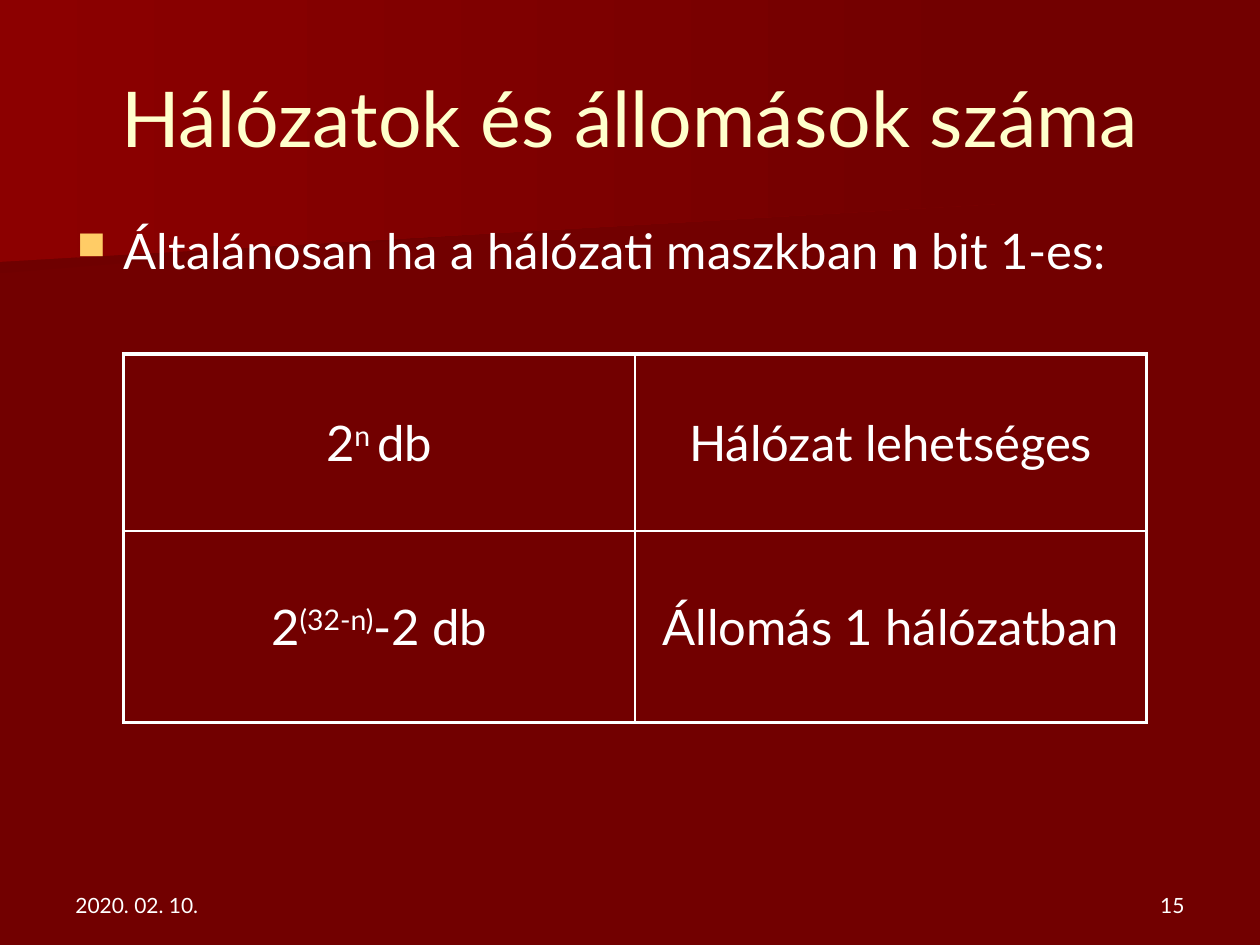
from lxml import etree
from pptx import Presentation
from pptx.dml.color import RGBColor
from pptx.enum import text
from pptx.oxml import ns
from pptx.util import Cm, Pt

WHITE = RGBColor(0xFF, 0xFF, 0xFF)
CREAM = RGBColor(0xFF, 0xFF, 0xCC)
GOLD = RGBColor(0xFF, 0xCC, 0x66)
DARK_RED = RGBColor(0x72, 0x00, 0x00)
SHADE_RED = RGBColor(0x6F, 0x00, 0x00)
BRIGHT_RED = RGBColor(0x8C, 0x00, 0x00)

FONT = "Lato"
LEFT, CENTER, RIGHT = text.PP_ALIGN.LEFT, text.PP_ALIGN.CENTER, text.PP_ALIGN.RIGHT
TOP, MIDDLE, BOTTOM = text.MSO_ANCHOR.TOP, text.MSO_ANCHOR.MIDDLE, text.MSO_ANCHOR.BOTTOM

BANDS = [
    ([(0, 2.57), (19.79, 2.57), (19.76, 3.89), (0, 5.51)], SHADE_RED),
    ([(0, 0), (20.12, 0), (20.12, 4.11), (0, 5.28)], BRIGHT_RED),
]
TITLE = [("Hálózatok és állomások száma", "")]
BODY = [("Általánosan ha a hálózati maszkban ", ""), ("n", "bold"), (" bit 1-es:", "")]
DATE = [("2020. 02. 10.", "")]
NUMBER = [("15", "")]
ROWS = [
    [[("2", ""), ("n ", "super"), ("db", "")], [("Hálózat lehetséges", "")]],
    [[("2", ""), ("(32-n)", "super"), ("-2 db", "")], [("Állomás 1 hálózatban", "")]],
]
TABLE_LEFT, TABLE_TOP = 2.49, 7.14
COL_WIDTH = 10.31
ROW_HEIGHTS = [3.56, 3.86]
OUTER, INNER = 2.25, 1


def write(p, runs, size, color, align):
    p.alignment = align
    for words, style in runs:
        r = p.add_run()
        r.text = words
        r.font.name = FONT
        r.font.size = Pt(size)
        r.font.color.rgb = color
        if style == "bold":
            r.font.bold = True
        elif style == "super":
            r.font._element.set("baseline", "30000")


def add_text(s, box, runs, size, color, align, anchor):
    tf = s.shapes.add_textbox(*map(Cm, box)).text_frame
    tf.word_wrap = True
    tf.vertical_anchor = anchor
    p = tf.paragraphs[0]
    write(p, runs, size, color, align)
    return p


def add_bullet(p):
    p.space_before = Pt(5.6)
    pPr = p._p.get_or_add_pPr()
    pPr.set("marL", str(Cm(0.95)))
    pPr.set("indent", str(Cm(-0.95)))
    clr = etree.SubElement(pPr, ns.qn("a:buClr"))
    etree.SubElement(clr, ns.qn("a:srgbClr"), val=str(GOLD))
    etree.SubElement(pPr, ns.qn("a:buSzPct"), val="80000")
    etree.SubElement(pPr, ns.qn("a:buChar"), char="■")


def add_borders(cell, widths):
    tcPr = cell._tc.get_or_add_tcPr()
    for i, (side, width) in enumerate(zip("LRTB", widths)):
        ln = etree.Element(ns.qn(f"a:ln{side}"), w=str(Pt(width)))
        fill = etree.SubElement(ln, ns.qn("a:solidFill"))
        etree.SubElement(fill, ns.qn("a:srgbClr"), val=str(WHITE))
        tcPr.insert(i, ln)


def add_band(s, points, color):
    start, *rest = [(Cm(x), Cm(y)) for x, y in points]
    builder = s.shapes.build_freeform(*start)
    builder.add_line_segments(rest, close=True)
    sp = builder.convert_to_shape()
    sp.shadow.inherit = False
    sp.line.fill.background()
    sp.fill.gradient()
    sp.fill.gradient_angle = 0
    for stop, rgb in zip(sp.fill.gradient_stops, (color, DARK_RED)):
        stop.color.rgb = rgb


def add_grid(s):
    n_rows, n_cols = len(ROWS), len(ROWS[0])
    frame = s.shapes.add_table(n_rows, n_cols, Cm(TABLE_LEFT), Cm(TABLE_TOP),
                               Cm(COL_WIDTH * n_cols), Cm(sum(ROW_HEIGHTS)))
    table = frame.table
    table.first_row = table.horz_banding = False
    for col in table.columns:
        col.width = Cm(COL_WIDTH)
    for i, row in enumerate(ROWS):
        table.rows[i].height = Cm(ROW_HEIGHTS[i])
        for j, runs in enumerate(row):
            cell = table.cell(i, j)
            cell.fill.background()
            cell.vertical_anchor = MIDDLE
            p = cell.text_frame.paragraphs[0]
            p.space_before = Pt(5.6)
            write(p, runs, 28, WHITE, CENTER)
            edges = (j == 0, j == n_cols - 1, i == 0, i == n_rows - 1)
            add_borders(cell, [OUTER if edge else INNER for edge in edges])


def main():
    prs = Presentation()
    prs.slide_width, prs.slide_height = Cm(25.4), Cm(19.05)
    s = prs.slides.add_slide(prs.slide_layouts[6])
    s.background.fill.solid()
    s.background.fill.fore_color.rgb = DARK_RED
    for points, color in BANDS:
        add_band(s, points, color)
    add_text(s, (1.27, 17.35, 5.92, 1.27), DATE, 12, WHITE, LEFT, BOTTOM)
    add_text(s, (18.21, 17.35, 5.92, 1.27), NUMBER, 12, WHITE, RIGHT, BOTTOM)
    add_text(s, (1.27, 0.76, 22.86, 3.18), TITLE, 44, CREAM, CENTER, MIDDLE)
    add_bullet(add_text(s, (1.3, 4.32, 22.83, 1.8), BODY, 28, WHITE, LEFT, TOP))
    add_grid(s)
    prs.save("out.pptx")


if __name__ == "__main__":
    main()
